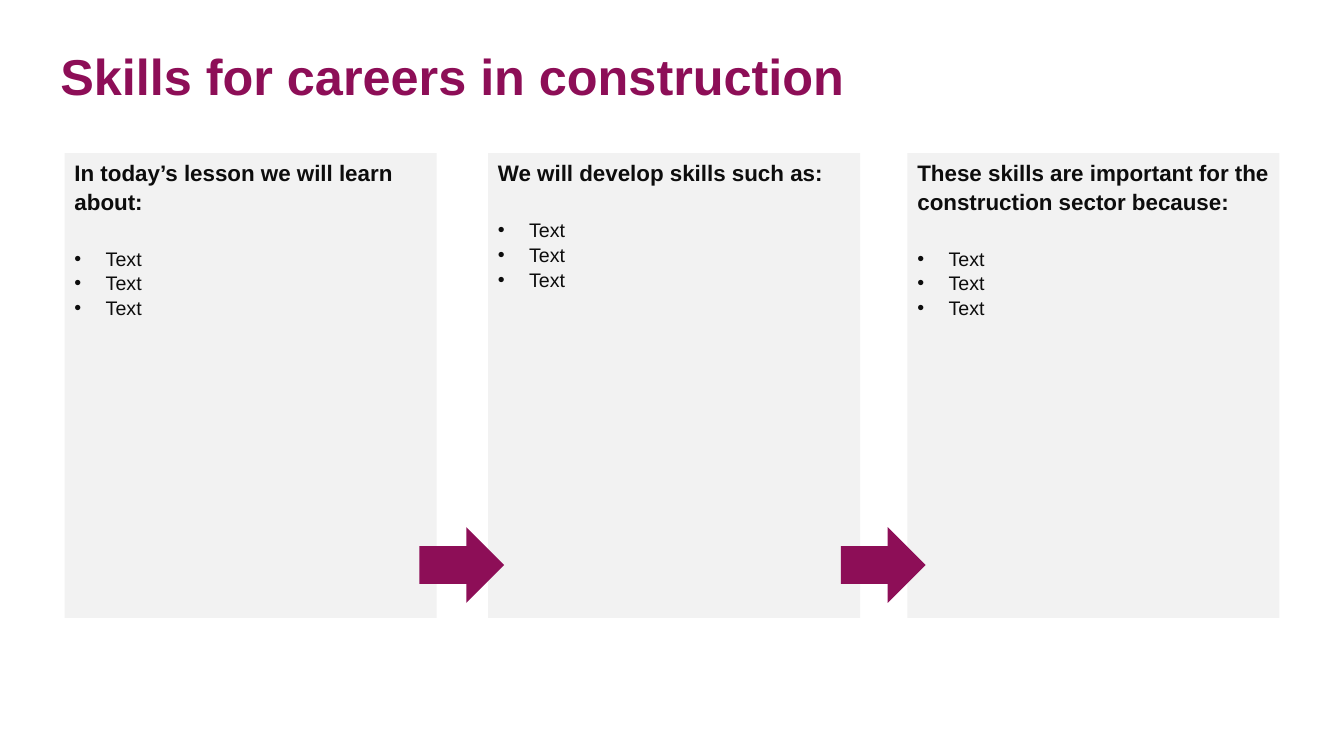
import pptx
import pptx.dml.color
import pptx.enum.shapes
import pptx.enum.text
import pptx.oxml.xmlchemy
import pptx.util
from pptx.util import Inches

PLUM = "8D0E57"
PALE = "F2F2F2"
INK = "0D0D0D"
SHAPES = pptx.enum.shapes.MSO_SHAPE
ANCHOR = pptx.enum.text.MSO_ANCHOR
ALIGN = pptx.enum.text.PP_ALIGN

PANELS = [
    (0.64, "In today’s lesson we will learn about:"),
    (4.84, "We will develop skills such as:"),
    (9, "These skills are important for the construction sector because:"),
]
POINTS = ["Text"] * 3
ARROWS = [4.16, 8.34]


def color(code):
    return pptx.dml.color.RGBColor.from_string(code)


def add_bullet(para):
    props = para._p.get_or_add_pPr()
    props.set("marL", str(Inches(0.31)))
    props.set("indent", str(-Inches(0.31)))
    for tag, name, value in [("buFont", "typeface", "Arial"), ("buChar", "char", "•")]:
        item = pptx.oxml.xmlchemy.OxmlElement("a:" + tag)
        item.set(name, value)
        props.append(item)


def write(frame, text, size, ink=INK, bold=False, bullet=False, lines=1.05, before=0):
    """Fill the first paragraph if it is empty, else add a new one."""
    para = frame.paragraphs[0] if not frame.text else frame.add_paragraph()
    if bullet:
        add_bullet(para)
    para.alignment = ALIGN.LEFT
    para.line_spacing = lines
    if before:
        para.space_before = pptx.util.Pt(before)
    run = para.add_run()
    run.text = text
    font = run.font
    font.name = "Arial"
    font.size = pptx.util.Pt(size)
    font.bold = bold
    font.color.rgb = color(ink)


def add_shape(slide, kind, left, top, width, height, fill):
    shape = slide.shapes.add_shape(
        kind, Inches(left), Inches(top), Inches(width), Inches(height))
    shape.shadow.inherit = False
    shape.fill.solid()
    shape.fill.fore_color.rgb = color(fill)
    shape.line.fill.background()
    return shape


def add_title(slide, text):
    box = slide.shapes.add_textbox(Inches(0.5), Inches(0.36), Inches(11.92), Inches(0.86))
    frame = box.text_frame
    frame.word_wrap = True
    frame.vertical_anchor = ANCHOR.MIDDLE
    write(frame, text, 36, ink=PLUM, bold=True, lines=0.9)


def add_panel(slide, left, heading, points):
    panel = add_shape(slide, SHAPES.RECTANGLE, left, 1.52, 3.69, 4.61, PALE)
    frame = panel.text_frame
    frame.word_wrap = True
    frame.vertical_anchor = ANCHOR.TOP
    write(frame, heading, 16, bold=True)
    for index, point in enumerate(points):
        write(frame, point, 14, bullet=True, before=0 if index else 22)


def main():
    deck = pptx.Presentation()
    deck.slide_width = Inches(13.33)
    deck.slide_height = Inches(7.5)
    slide = deck.slides.add_slide(deck.slide_layouts[6])
    add_title(slide, "Skills for careers in construction")
    for left, heading in PANELS:
        add_panel(slide, left, heading, POINTS)
    for left in ARROWS:
        add_shape(slide, SHAPES.RIGHT_ARROW, left, 5.23, 0.84, 0.75, PLUM)
    deck.save("out.pptx")


if __name__ == "__main__":
    main()
